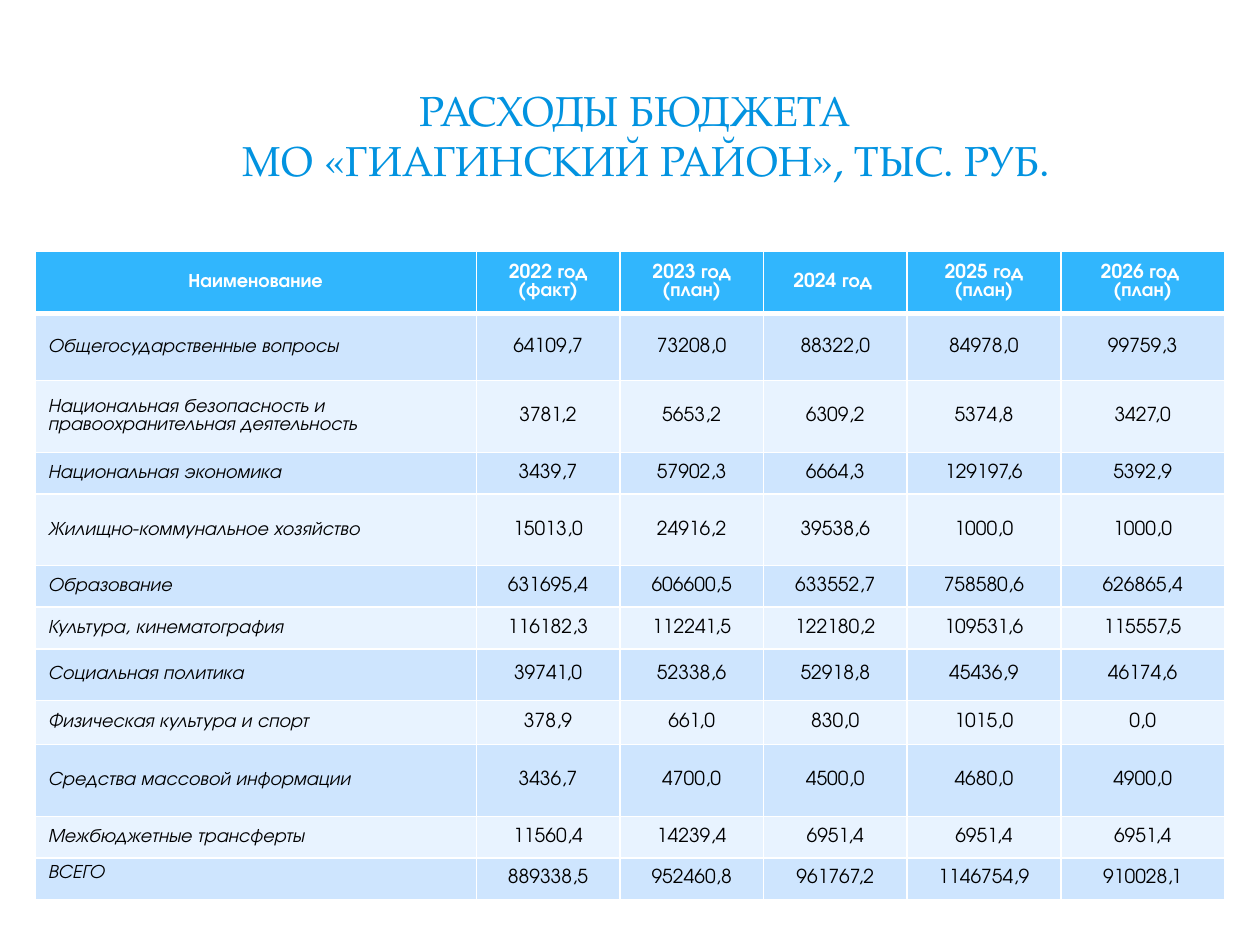
from dataclasses import dataclass

from lxml.etree import SubElement
from pptx import Presentation
from pptx.dml.color import RGBColor
from pptx.enum.shapes import MSO_SHAPE as Preset
from pptx.enum.text import MSO_ANCHOR as Anchor, PP_ALIGN as Align
from pptx.oxml.ns import qn
from pptx.util import Inches, Pt


@dataclass(frozen=True)
class Theme:
    title_font: str = "TeX Gyre Pagella"
    table_font: str = "TeX Gyre Adventor"
    title_size: int = 24
    table_size: int = 11
    line_pitch: float = 10.3
    title: str = "0293E0"
    header: str = "31B6FD"
    bands: tuple = ("CEE5FE", "E8F3FF")
    white: str = "FFFFFF"
    black: str = "000000"
    thin_rule: int = 1
    header_rule: int = 3


@dataclass(frozen=True)
class Panel:
    preset: Preset
    left: float
    top: float
    width: float
    height: float
    opacity: int = 100


@dataclass(frozen=True)
class BudgetLine:
    name: str
    amounts: str
    height: float


@dataclass(frozen=True)
class CellStyle:
    fill: str
    color: str
    bold: bool = False
    italic: bool = False
    align: Align = Align.CENTER
    anchor: Anchor = Anchor.MIDDLE
    bottom_rule: int = THIN_RULE if (THIN_RULE := Theme.thin_rule) else 0


THEME = Theme()
PANELS = [
    Panel(Preset.ROUNDED_RECTANGLE, 0.1, 0.11, 9.8, 7.29),
    Panel(Preset.RECTANGLE, 0.3, 0.3, 9.4, 1.45, opacity=83),
    Panel(Preset.RECTANGLE, 0.41, 0.41, 9.17, 1.22),
]
CORNER_RATIO = 0.02
TITLE = "РАСХОДЫ БЮДЖЕТА \v МО «ГИАГИНСКИЙ РАЙОН», ТЫС. РУБ."
HEADINGS = ["Наименование", "2022 год (факт)", "2023 год (план)",
            "2024 год ", "2025 год\n(план)", "2026 год \n(план)"]
COLUMN_WIDTHS = [3.5, 1.14, 1.14, 1.14, 1.22, 1.3]
HEADER_HEIGHT = 0.5
BUDGET = [
    BudgetLine("Общегосударственные вопросы",
               "64109,7 73208,0 88322,0 84978,0 99759,3", 0.53),
    BudgetLine("Национальная безопасность и правоохранительная деятельность",
               "3781,2 5653,2 6309,2 5374,8 3427,0", 0.57),
    BudgetLine("Национальная экономика",
               "3439,7 57902,3 6664,3 129197,6 5392,9", 0.33),
    BudgetLine("Жилищно-коммунальное хозяйство",
               "15013,0 24916,2 39538,6 1000,0 1000,0", 0.57),
    BudgetLine("Образование",
               "631695,4 606600,5 633552,7 758580,6 626865,4", 0.33),
    BudgetLine("Культура, кинематография",
               "116182,3 112241,5 122180,2 109531,6 115557,5", 0.33),
    BudgetLine("Социальная политика",
               "39741,0 52338,6 52918,8 45436,9 46174,6", 0.41),
    BudgetLine("Физическая культура и спорт",
               "378,9 661,0 830,0 1015,0 0,0", 0.35),
    BudgetLine("Средства массовой информации",
               "3436,7 4700,0 4500,0 4680,0 4900,0", 0.57),
    BudgetLine("Межбюджетные трансферты",
               "11560,4 14239,4 6951,4 6951,4 6951,4", 0.33),
    BudgetLine("ВСЕГО",
               "889338,5 952460,8 961767,2 1146754,9 910028,1", 0.33),
]


def add_panel(page, panel: Panel) -> None:
    shape = page.shapes.add_shape(panel.preset, Inches(panel.left), Inches(panel.top),
                                  Inches(panel.width), Inches(panel.height))
    shape.shadow.inherit = False
    shape.line.fill.background()
    shape.fill.solid()
    shape.fill.fore_color.rgb = RGBColor.from_string(THEME.white)
    if panel.preset == Preset.ROUNDED_RECTANGLE:
        shape.adjustments[0] = CORNER_RATIO
    if panel.opacity < 100:
        color = shape.fill._xPr.find(qn("a:solidFill"))[0]
        SubElement(color, qn("a:alpha"), val=str(panel.opacity * 1000))


def format_span(span, font: str, size: int, color: str) -> None:
    span.font.name = font
    span.font.size = Pt(size)
    span.font.color.rgb = RGBColor.from_string(color)


def add_title(page) -> None:
    box = page.shapes.add_textbox(Inches(0.52), Inches(0.52), Inches(9.13), Inches(1.1))
    frame = box.text_frame
    frame.word_wrap = True
    frame.vertical_anchor = Anchor.MIDDLE
    frame.text = TITLE
    para = frame.paragraphs[0]
    para.alignment = Align.CENTER
    for span in para.runs:
        format_span(span, THEME.title_font, THEME.title_size, THEME.title)


def set_borders(cell, bottom: int) -> None:
    """Rule the cell in white; call before filling, as lines precede the fill in XML."""
    properties = cell._tc.get_or_add_tcPr()
    thin = THEME.thin_rule
    for side, width in {"L": thin, "R": thin, "T": thin, "B": bottom}.items():
        line = SubElement(properties, qn(f"a:ln{side}"), w=str(Pt(width)))
        solid = SubElement(line, qn("a:solidFill"))
        SubElement(solid, qn("a:srgbClr"), val=THEME.white)


def fill_cell(cell, text: str, style: CellStyle) -> None:
    set_borders(cell, style.bottom_rule)
    cell.fill.solid()
    cell.fill.fore_color.rgb = RGBColor.from_string(style.fill)
    cell.vertical_anchor = style.anchor
    cell.text_frame.text = text
    for para in cell.text_frame.paragraphs:
        para.alignment = style.align
        para.line_spacing = Pt(THEME.line_pitch)
        for span in para.runs:
            format_span(span, THEME.table_font, THEME.table_size, style.color)
            span.font.bold = style.bold
            span.font.italic = style.italic


def add_budget_table(page) -> None:
    heights = [HEADER_HEIGHT] + [line.height for line in BUDGET]
    table = page.shapes.add_table(
        len(heights), len(COLUMN_WIDTHS), Inches(0.28), Inches(1.99),
        Inches(sum(COLUMN_WIDTHS)), Inches(sum(heights))).table
    for column, width in zip(table.columns, COLUMN_WIDTHS):
        column.width = Inches(width)
    for row, height in zip(table.rows, heights):
        row.height = Inches(height)

    header = CellStyle(THEME.header, THEME.white, bold=True,
                       bottom_rule=THEME.header_rule)
    for column, heading in enumerate(HEADINGS):
        fill_cell(table.cell(0, column), heading, header)

    for index, line in enumerate(BUDGET):
        band = THEME.bands[index % 2]
        is_total = index == len(BUDGET) - 1
        label = CellStyle(band, THEME.black, italic=True, align=Align.LEFT,
                          anchor=Anchor.TOP if is_total else Anchor.MIDDLE)
        amount = CellStyle(band, THEME.black)
        fill_cell(table.cell(index + 1, 0), line.name, label)
        for column, value in enumerate(line.amounts.split(), start=1):
            fill_cell(table.cell(index + 1, column), value, amount)


def main() -> None:
    deck = Presentation()
    deck.slide_width, deck.slide_height = Inches(10), Inches(7.5)
    page = deck.slides.add_slide(deck.slide_layouts[6])
    for panel in PANELS:
        add_panel(page, panel)
    add_title(page)
    add_budget_table(page)
    deck.save("out.pptx")


if __name__ == "__main__":
    main()
